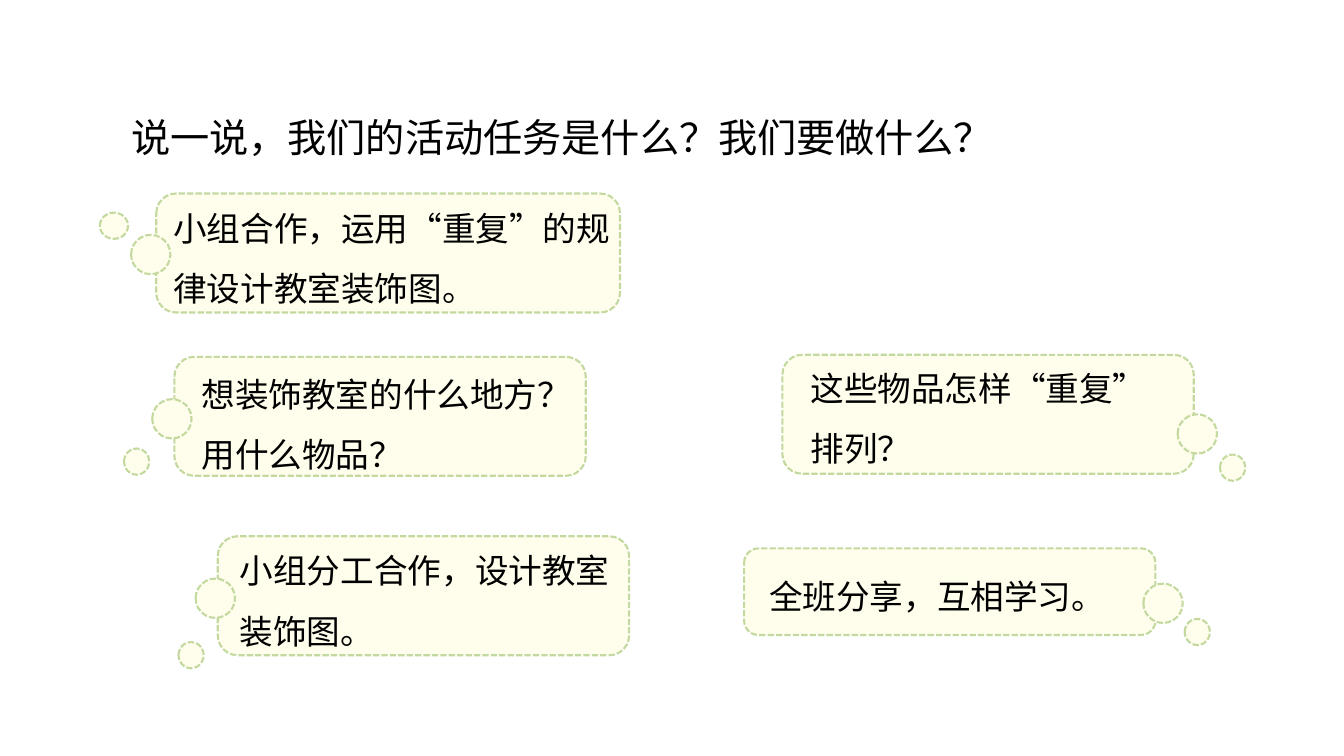
"""Build a slide with a question and five thought bubbles of answers."""
from lxml import etree
from pptx import Presentation
from pptx.dml.color import RGBColor
from pptx.enum import dml, lang, shapes, text
from pptx.oxml import ns
from pptx.util import Inches, Pt

COLORS = {"fill": "FFFEEC", "line": "C4D9A0", "text": "000000"}
FONT = "Noto Sans CJK SC"


def write(tf, lines, size):
    tf.word_wrap = True
    tf.auto_size = text.MSO_AUTO_SIZE.SHAPE_TO_FIT_TEXT
    tf.vertical_anchor = text.MSO_ANCHOR.TOP
    for i, line in enumerate(lines):
        p = tf.add_paragraph() if i else tf.paragraphs[0]
        p.alignment = text.PP_ALIGN.LEFT
        p.line_spacing = 1.5
        p.space_before = Pt(0)
        r = p.add_run()
        r.text = line
        r.font.size = Pt(size)
        r.font.name = FONT
        r.font.language_id = lang.MSO_LANGUAGE_ID.SIMPLIFIED_CHINESE
        r.font.color.rgb = RGBColor.from_string(COLORS["text"])
        ea = etree.SubElement(r.font._element, ns.qn("a:ea"))
        ea.set("typeface", FONT)


def add_part(group, kind, box):
    sp = group.shapes.add_shape(kind, *map(Inches, box))
    sp.shadow.inherit = False
    sp.fill.solid()
    sp.fill.fore_color.rgb = RGBColor.from_string(COLORS["fill"])
    sp.line.color.rgb = RGBColor.from_string(COLORS["line"])
    sp.line.width = Pt(1.5)
    sp.line.dash_style = dml.MSO_LINE.SQUARE_DOT


prs = Presentation()
prs.slide_width, prs.slide_height = Inches(13.33), Inches(7.5)
s = prs.slides.add_slide(prs.slide_layouts[5])

title = s.shapes.title
title.left, title.top = Inches(1.2), Inches(0.84)
title.width, title.height = Inches(11.02), Inches(0.81)
write(title.text_frame, ["说一说，我们的活动任务是什么？我们要做什么？"], 28)

# each bubble: body box, large dot corner, small dot box, text box, lines
bubbles = [
    ((1.55, 1.92, 4.6, 1.18), (1.3, 2.33), (0.99, 2.11, 0.28, 0.26),
     (1.62, 1.81, 4.54, 1.31), ["小组合作，运用“重复”的规律设计教室装饰图。"]),
    ((1.73, 3.54, 4.08, 1.18), (1.51, 3.96), (1.23, 4.45, 0.25, 0.26),
     (1.9, 3.46, 3.9, 1.31), ["想装饰教室的什么地方？用什么物品？"]),
    ((7.76, 3.52, 4.08, 1.18), (11.68, 4.11), (12.1, 4.51, 0.25, 0.26),
     (7.94, 3.4, 3.9, 1.31), ["这些物品怎样“重复”", "排列？"]),
    ((2.16, 5.32, 4.08, 1.18), (1.94, 5.74), (1.77, 6.37, 0.25, 0.26),
     (2.28, 5.21, 3.9, 1.31), ["小组分工合作，设计教室装饰图。"]),
    ((7.38, 5.44, 4.08, 0.86), (11.34, 5.79), (11.75, 6.14, 0.25, 0.26),
     (7.53, 5.46, 3.9, 0.71), ["全班分享，互相学习。"]),
]
for body, large_dot, small_dot, text_box, lines in bubbles:
    group = s.shapes.add_group_shape()
    add_part(group, shapes.MSO_SHAPE.ROUNDED_RECTANGLE, body)
    add_part(group, shapes.MSO_SHAPE.OVAL, (*large_dot, 0.39, 0.39))
    add_part(group, shapes.MSO_SHAPE.OVAL, small_dot)
    tb = s.shapes.add_textbox(*map(Inches, text_box))
    write(tb.text_frame, lines, 24)

prs.save("out.pptx")
